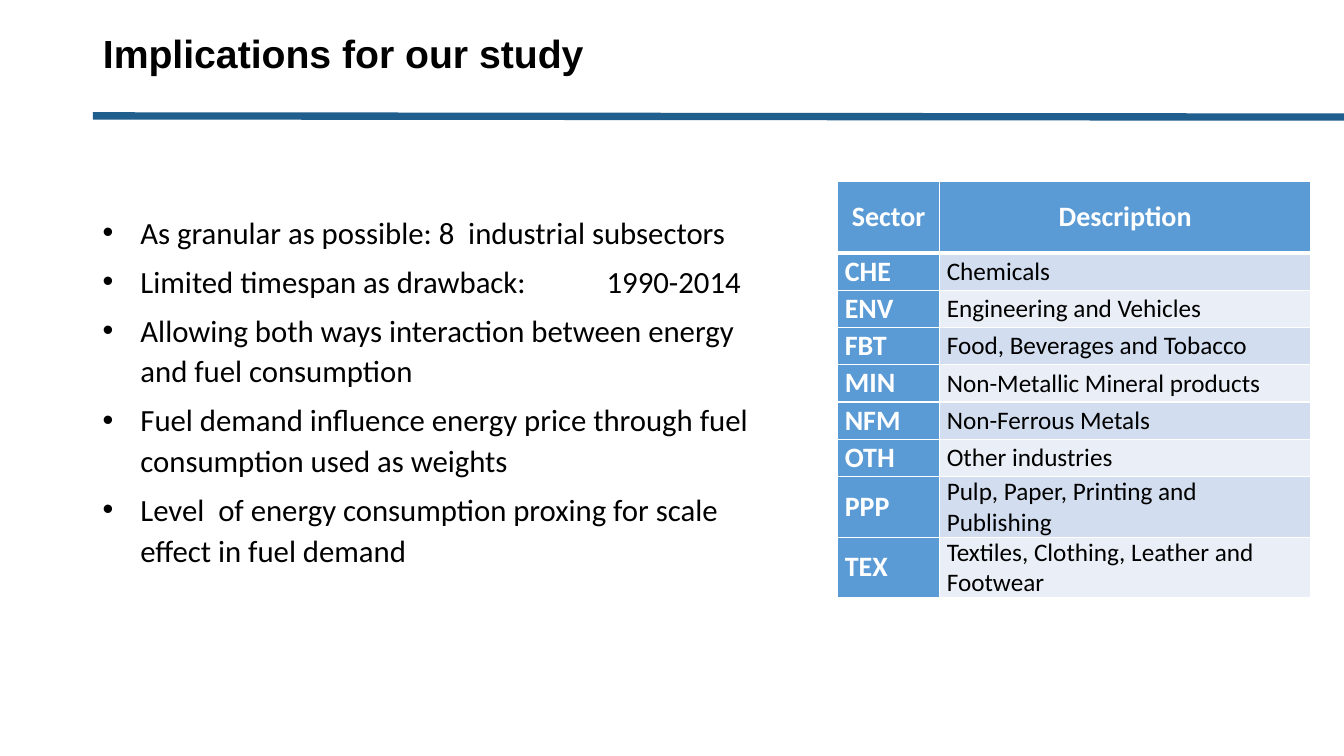
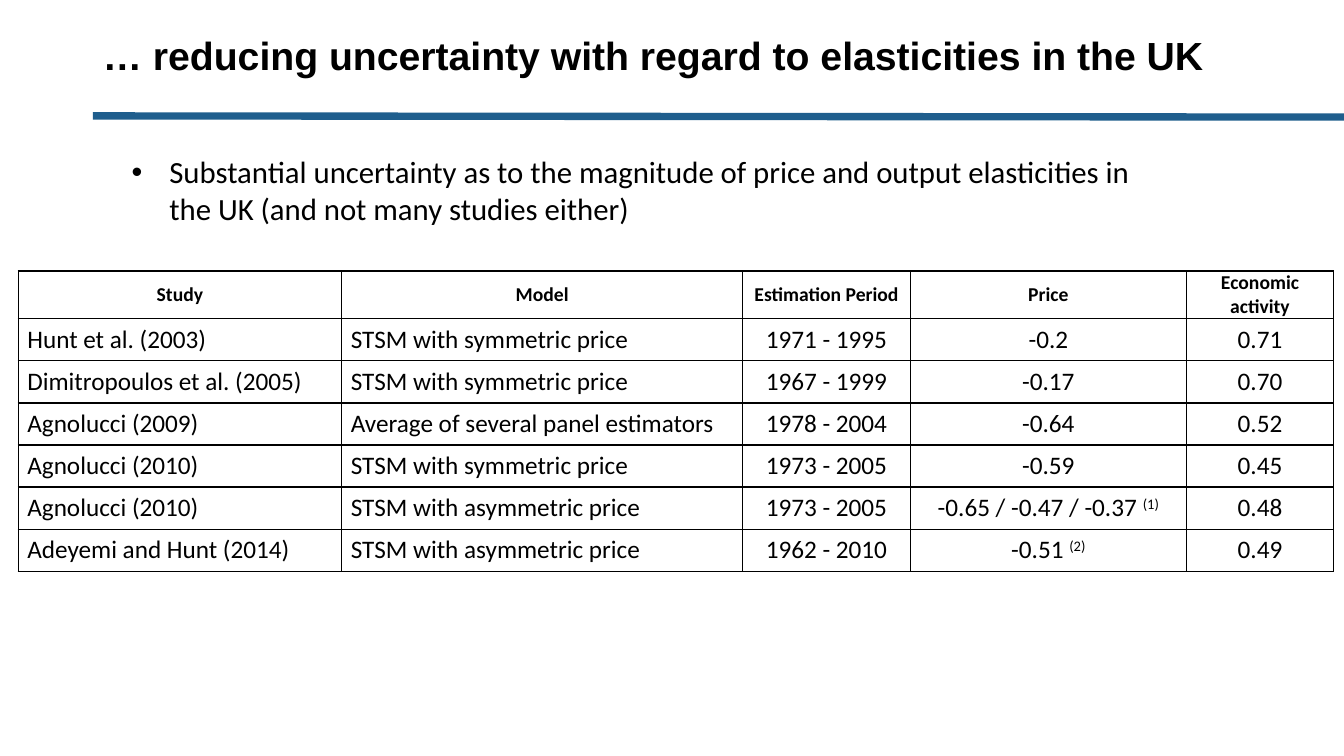
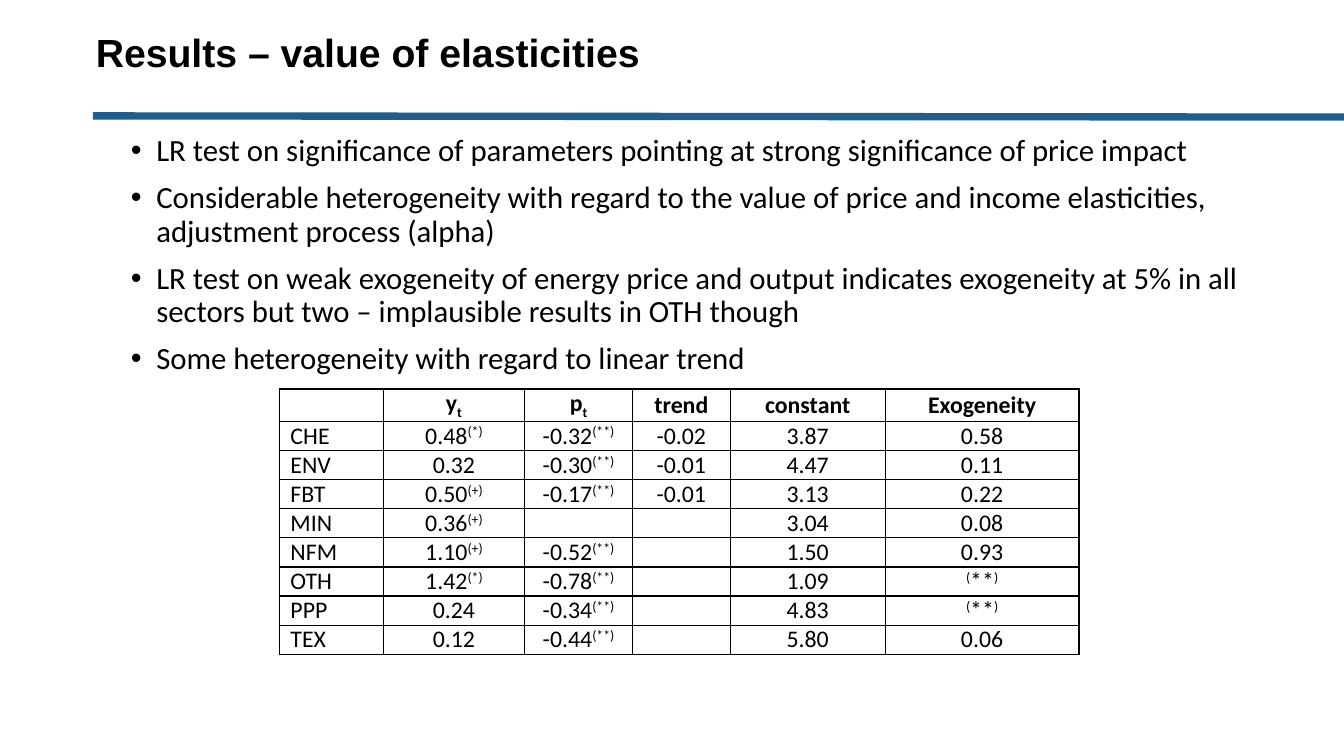
"""Build three slides on energy elasticities in UK industrial subsectors."""
from lxml import etree
from pptx import Presentation
from pptx import util as u
from pptx.dml import color
from pptx.enum import shapes, text
from pptx.oxml import ns

COLORS = {
    "rule": "1F5E8D",
    "text": "000000",
    "white": "FFFFFF",
    "header": "5B9BD5",
    "band_dark": "D2DEEF",
    "band_light": "EAEFF7",
}
TITLE_FONT = "Arial"
BODY_FONT = "Calibri"
SLIDE_WIDTH, SLIDE_HEIGHT = 33.87, 19.05
CENTER, LEFT = text.PP_ALIGN.CENTER, text.PP_ALIGN.LEFT
BASELINES = {"^": "30000", "_": "-25000"}

IMPLICATIONS = [
    "As granular as possible: 8  industrial subsectors",
    "Limited timespan as drawback:\t1990-2014",
    "Allowing both ways interaction between energy and fuel consumption",
    "Fuel demand influence energy price through fuel consumption used as weights",
    "Level  of energy consumption proxing for scale effect in fuel demand",
]
SECTORS = [
    ("Sector", "Description"),
    ("CHE", "Chemicals"),
    ("ENV", "Engineering and Vehicles"),
    ("FBT", "Food, Beverages and Tobacco"),
    ("MIN", "Non-Metallic Mineral products"),
    ("NFM", "Non-Ferrous Metals"),
    ("OTH", "Other industries"),
    ("PPP", "Pulp, Paper, Printing and Publishing"),
    ("TEX", "Textiles, Clothing, Leather and Footwear"),
]
UNCERTAINTY = [
    "Substantial uncertainty as to the magnitude of price and output elasticities in "
    "the UK (and not many studies either)",
]
STUDIES = [
    ("Study", "Model", "Estimation Period", "Price", "Economic activity"),
    ("Hunt et al. (2003)", "STSM with symmetric price", "1971 - 1995", "-0.2", "0.71"),
    ("Dimitropoulos et al. (2005)", "STSM with symmetric price", "1967 - 1999", "-0.17", "0.70"),
    ("Agnolucci (2009)", "Average of several panel estimators", "1978 - 2004", "-0.64", "0.52"),
    ("Agnolucci (2010)", "STSM with symmetric price", "1973 - 2005", "-0.59", "0.45"),
    ("Agnolucci (2010)", "STSM with asymmetric price", "1973 - 2005",
     "-0.65 / -0.47 / -0.37 |^(1)", "0.48"),
    ("Adeyemi and Hunt (2014)", "STSM with asymmetric price", "1962 - 2010",
     "-0.51 |^(2)", "0.49"),
]
FINDINGS = [
    "LR test on significance of parameters pointing at strong significance of price impact",
    "Considerable heterogeneity with regard to the value of price and income elasticities, "
    "adjustment process (alpha)",
    "LR test on weak exogeneity of energy price and output indicates exogeneity at 5% in all "
    "sectors but two – implausible results in OTH though",
    "Some heterogeneity with regard to linear trend",
]
ELASTICITIES = [
    ("", "y|_t", "p|_t", "trend", "constant", "Exogeneity"),
    ("CHE", "0.48|^(*)", "-0.32|^(**)", "-0.02", "3.87", "0.58"),
    ("ENV", "0.32", "-0.30|^(**)", "-0.01", "4.47", "0.11"),
    ("FBT", "0.50|^(+)", "-0.17|^(**)", "-0.01", "3.13", "0.22"),
    ("MIN", "0.36|^(+)", "", "", "3.04", "0.08"),
    ("NFM", "1.10|^(+)", "-0.52|^(**)", "", "1.50", "0.93"),
    ("OTH", "1.42|^(*)", "-0.78|^(**)", "", "1.09", "^(|**|^)"),
    ("PPP", "0.24", "-0.34|^(**)", "", "4.83", "^(|**|^)"),
    ("TEX", "0.12", "-0.44|^(**)", "", "5.80", "0.06"),
]


def rgb(name):
    """Return the named palette colour."""
    return color.RGBColor.from_string(COLORS[name])


def cm_box(box):
    """Convert a box in centimetres to lengths."""
    return [u.Cm(value) for value in box]


def style_font(font, face, size, color_name, bold=False):
    """Apply face, size, colour and weight to a font."""
    font.name, font.size, font.bold = face, u.Pt(size), bold
    font.color.rgb = rgb(color_name)


def add_titled_slide(deck, heading, box):
    """Add a title-only slide with the shared title style and rule."""
    slide = deck.slides.add_slide(deck.slide_layouts[5])
    title = slide.shapes.title
    title.left, title.top, title.width, title.height = cm_box(box)
    frame = title.text_frame
    frame.text = heading
    frame.word_wrap = True
    frame.auto_size = text.MSO_AUTO_SIZE.NONE
    frame.vertical_anchor = text.MSO_ANCHOR.MIDDLE
    paragraph = frame.paragraphs[0]
    paragraph.alignment, paragraph.line_spacing = LEFT, 0.9
    style_font(paragraph.runs[0].font, TITLE_FONT, 28, "text", True)

    rule = slide.shapes.add_connector(
        shapes.MSO_CONNECTOR.STRAIGHT, *cm_box((2.34, 2.92, SLIDE_WIDTH, 2.95)))
    rule.line.color.rgb = rgb("rule")
    rule.line.width = u.Pt(5.25)
    etree.SubElement(rule.element.spPr, ns.qn("a:effectLst"))
    return slide


def add_bullets(slide, box, items, indent, line_spacing=1.0, gap=0, tab=None):
    """Add a bulleted list in the given box."""
    frame = slide.shapes.add_textbox(*cm_box(box)).text_frame
    frame.word_wrap = True
    frame.text = "\n".join(items)
    for index, paragraph in enumerate(frame.paragraphs):
        properties = paragraph._p.get_or_add_pPr()
        properties.set("marL", str(u.Cm(indent)))
        properties.set("indent", str(-u.Cm(indent)))
        etree.SubElement(properties, ns.qn("a:buFont"), typeface="Arial")
        etree.SubElement(properties, ns.qn("a:buChar"), char="•")
        if tab:
            stops = etree.SubElement(properties, ns.qn("a:tabLst"))
            etree.SubElement(stops, ns.qn("a:tab"), pos=str(u.Cm(tab)), algn="l")
        paragraph.alignment, paragraph.line_spacing = LEFT, line_spacing
        paragraph.space_before = u.Pt(gap if index else 0)
        for run in paragraph.runs:
            style_font(run.font, BODY_FONT, 22, "text")


def set_border(cell, side, color_name, width):
    """Draw one side (L, R, T or B) of a cell."""
    properties = cell._tc.get_or_add_tcPr()
    border = etree.Element(ns.qn(f"a:ln{side}"), w=str(u.Pt(width)))
    fill = etree.SubElement(border, ns.qn("a:solidFill"))
    etree.SubElement(fill, ns.qn("a:srgbClr"), val=COLORS[color_name])
    properties.insert("LRTB".index(side), border)


def write_cell(cell, content, size, align, color_name="text", bold=False):
    """Write text whose parts, split by |, are raised by ^ or lowered by _."""
    cell.vertical_anchor = text.MSO_ANCHOR.MIDDLE
    paragraph = cell.text_frame.paragraphs[0]
    paragraph.alignment = align
    for part in filter(None, content.split("|")):
        run = paragraph.add_run()
        run.text = part.lstrip("^_")
        style_font(run.font, BODY_FONT, size, color_name, bold)
        if part[0] in BASELINES:
            run.font._element.set("baseline", BASELINES[part[0]])
    if not content:
        etree.SubElement(paragraph._p, ns.qn("a:endParaRPr"), sz=str(size * 100))


def add_grid(slide, origin, columns, row_heights, side_margin, border):
    """Add an unstyled table and return it with borders and margins set."""
    box = (*origin, sum(columns), sum(row_heights))
    grid = slide.shapes.add_table(len(row_heights), len(columns), *cm_box(box)).table
    grid.first_row = grid.horz_banding = False
    for column, width in zip(grid.columns, columns):
        column.width = u.Cm(width)
    for row, height in zip(grid.rows, row_heights):
        row.height = u.Cm(height)
    for cell in grid.iter_cells():
        cell.fill.background()
        cell.margin_left = cell.margin_right = u.Cm(side_margin)
        cell.margin_top = cell.margin_bottom = 0
        for side in "LRTB":
            set_border(cell, side, border, 1)
    return grid


def add_sector_table(slide, origin):
    """Add the banded table of sector codes."""
    heights = [1.8] + [0.94] * (len(SECTORS) - 1)
    grid = add_grid(slide, origin, (2.57, 9.35), heights, 0.18, "white")
    for r, row in enumerate(SECTORS):
        for c, content in enumerate(row):
            cell = grid.cell(r, c)
            is_header = r == 0 or c == 0
            band = "band_dark" if r % 2 else "band_light"
            cell.fill.solid()
            cell.fill.fore_color.rgb = rgb("header" if is_header else band)
            write_cell(cell, content, 20 if is_header else 18, LEFT if r else CENTER,
                       "white" if is_header else "text", is_header)
    for c in range(2):
        for r, side in ((0, "B"), (1, "T")):
            edge = grid.cell(r, c)._tc.tcPr.find(ns.qn(f"a:ln{side}"))
            edge.set("w", str(u.Pt(3)))


def add_ruled_table(slide, origin, columns, row_height, side_margin, rows, sizes, left_columns):
    """Add a black-ruled table with a bold header row."""
    grid = add_grid(slide, origin, columns, [row_height] * len(rows), side_margin, "text")
    for r, row in enumerate(rows):
        for c, content in enumerate(row):
            align = LEFT if r and c < left_columns else CENTER
            write_cell(grid.cell(r, c), content, sizes[min(r, 1)], align, bold=r == 0)


def build_implications(deck):
    """Build the slide on the implications for the study."""
    slide = add_titled_slide(deck, "Implications for our study", (2.34, 0, 30.68, 2.82))
    add_bullets(slide, (2.34, 5.16, 16.87, 9.4), IMPLICATIONS, 0.95, 1.1, 6, tab=12.7)
    add_sector_table(slide, (21.11, 4.57))


def build_uncertainty(deck):
    """Build the slide comparing earlier studies."""
    slide = add_titled_slide(
        deck, "… reducing uncertainty with regard to elasticities in the UK",
        (2.34, 0, 29.21, 2.92))
    add_ruled_table(slide, (0.46, 6.83), (8.15, 10.11, 4.22, 6.96, 3.71), 1.06, 0.23,
                    STUDIES, (14, 18), 2)
    add_bullets(slide, (3.07, 3.73, 25.93, 2.13), UNCERTAINTY, 0.95)


def build_results(deck):
    """Build the slide with the estimated elasticities."""
    slide = add_titled_slide(deck, "Results – value of elasticities", (2.16, 0.53, 29.21, 1.68))
    add_ruled_table(slide, (7.04, 9.8), (2.62, 3.56, 2.72, 2.46, 3.91, 4.88), 0.73, 0.28,
                    ELASTICITIES, (17, 17), 1)
    add_bullets(slide, (3.05, 3.28, 29.62, 12.09), FINDINGS, 0.64, 0.9, 10)


def main():
    """Build and save the presentation."""
    deck = Presentation()
    deck.slide_width, deck.slide_height = u.Cm(SLIDE_WIDTH), u.Cm(SLIDE_HEIGHT)
    for build in (build_implications, build_uncertainty, build_results):
        build(deck)
    deck.save("out.pptx")


if __name__ == "__main__":
    main()
